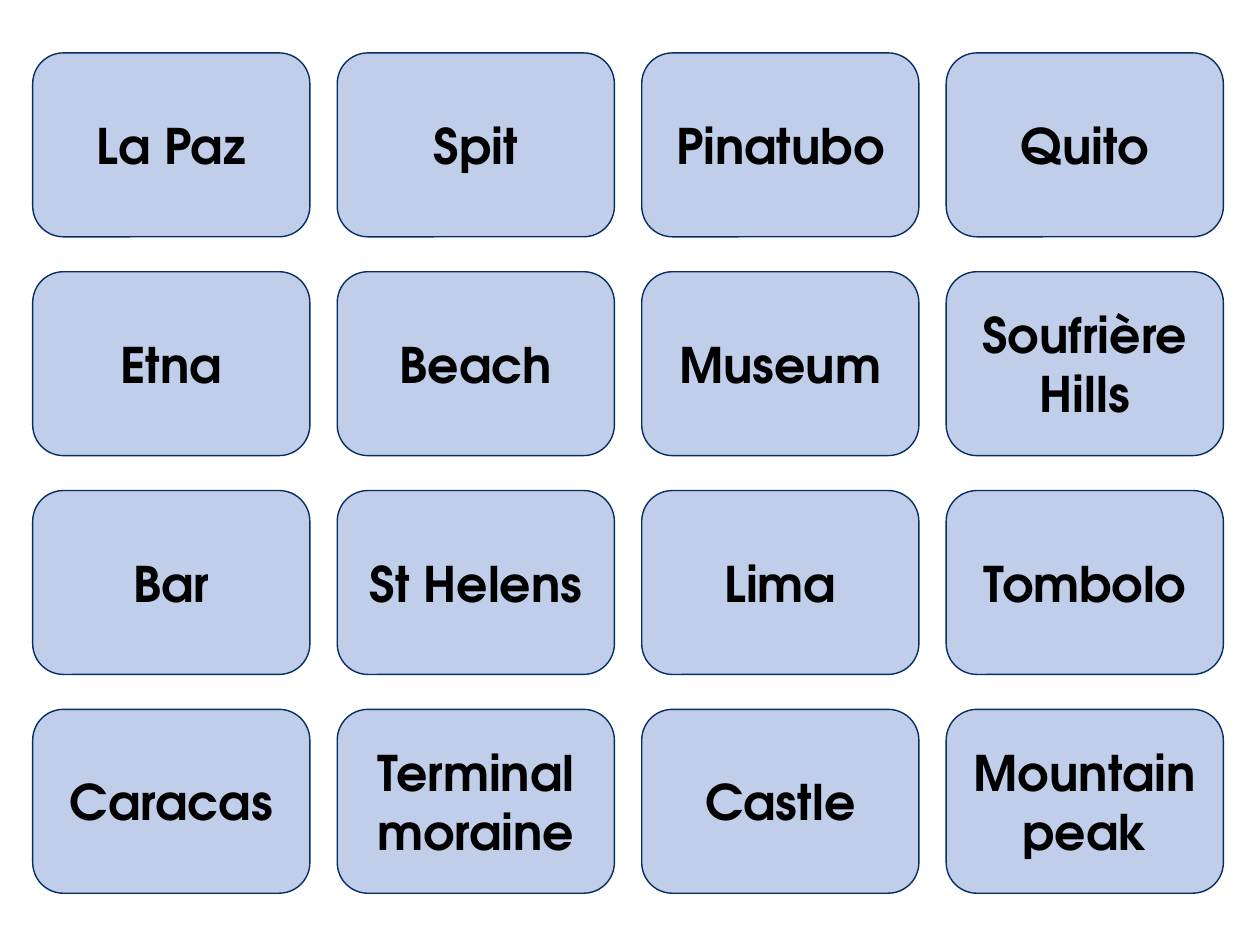
import pptx
import pptx.dml.color
import pptx.enum.shapes
import pptx.enum.text
import pptx.util

RGBColor = pptx.dml.color.RGBColor
Inches = pptx.util.Inches

CARDS = [
    ["La Paz", "Spit", "Pinatubo", "Quito"],
    ["Etna", "Beach", "Museum", "Soufrière Hills"],
    ["Bar", "St Helens", "Lima", "Tombolo"],
    ["Caracas", "Terminal moraine", "Castle", "Mountain peak"],
]

FILL = RGBColor(0xC1, 0xCE, 0xEA)
EDGE = RGBColor(0x05, 0x2E, 0x65)
INK = RGBColor(0x00, 0x00, 0x00)
FONT = {"name": "TeX Gyre Adventor", "size": pptx.util.Pt(28), "bold": True}

WIDE, HIGH = 10, 7.5
CARD_W, CARD_H = 2.2, 1.46
LEFT, RIGHT = 0.26, 9.71
TOP, BASE = 0.42, 7.09


def add_card(slide, text, left, top):
    card = slide.shapes.add_shape(
        pptx.enum.shapes.MSO_SHAPE.ROUNDED_RECTANGLE,
        Inches(left), Inches(top), Inches(CARD_W), Inches(CARD_H))
    card.shadow.inherit = False
    card.fill.solid()
    card.fill.fore_color.rgb = FILL
    card.line.color.rgb = EDGE
    card.line.width = pptx.util.Pt(0.79)

    frame = card.text_frame
    frame.word_wrap = True
    frame.vertical_anchor = pptx.enum.text.MSO_ANCHOR.MIDDLE
    para = frame.paragraphs[0]
    para.alignment = pptx.enum.text.PP_ALIGN.CENTER
    run = para.add_run()
    run.text = text
    for key, value in FONT.items():
        setattr(run.font, key, value)
    run.font.color.rgb = INK


def main():
    deck = pptx.Presentation()
    deck.slide_width, deck.slide_height = Inches(WIDE), Inches(HIGH)
    slide = deck.slides.add_slide(deck.slide_layouts[6])

    step_x = (RIGHT - LEFT - CARD_W) / (len(CARDS[0]) - 1)
    step_y = (BASE - TOP - CARD_H) / (len(CARDS) - 1)
    for row, names in enumerate(CARDS):
        for col, name in enumerate(names):
            add_card(slide, name, LEFT + col * step_x, TOP + row * step_y)

    deck.save("out.pptx")


if __name__ == "__main__":
    main()
